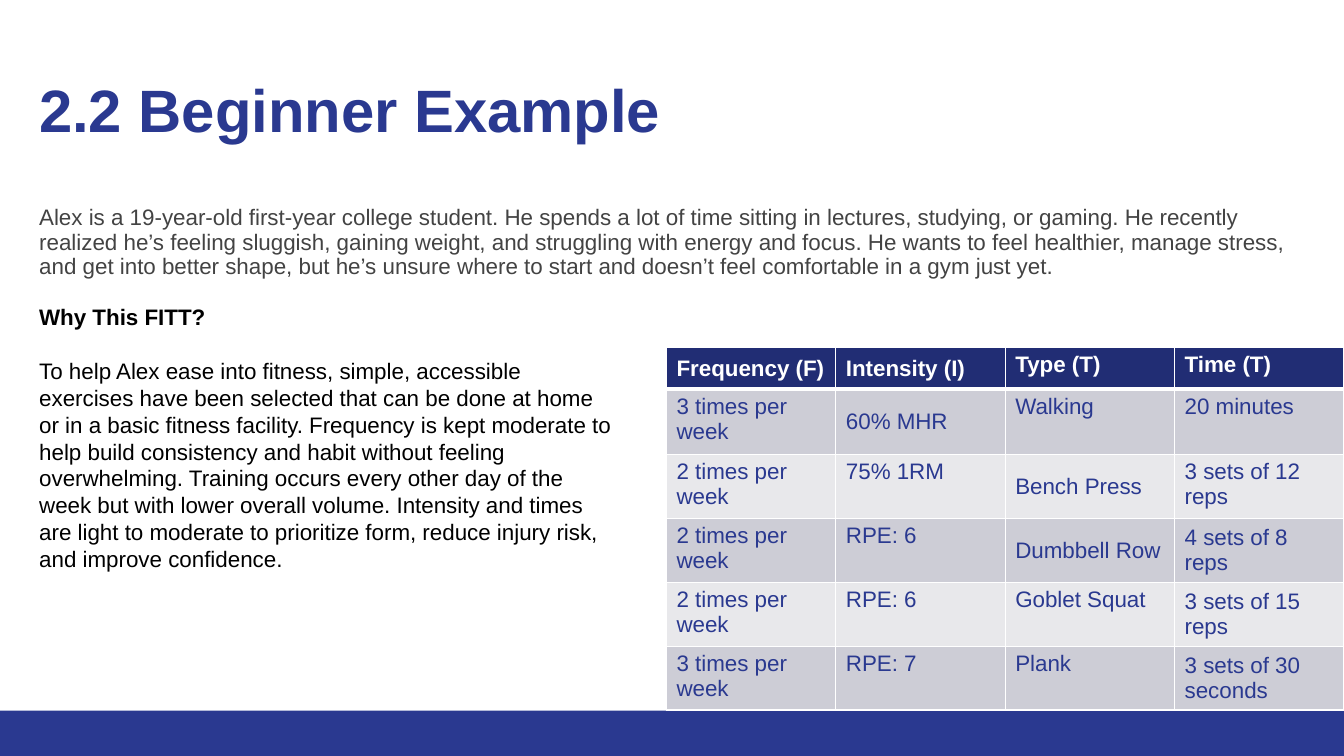
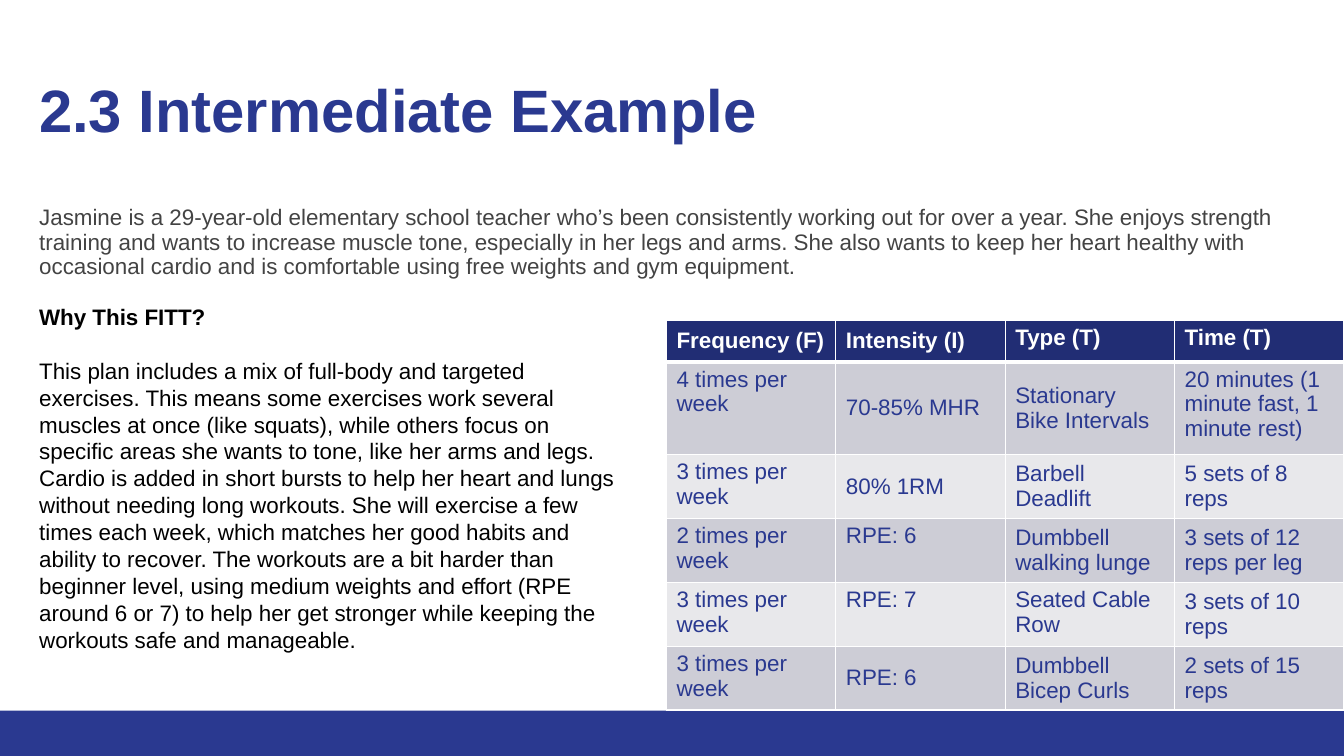
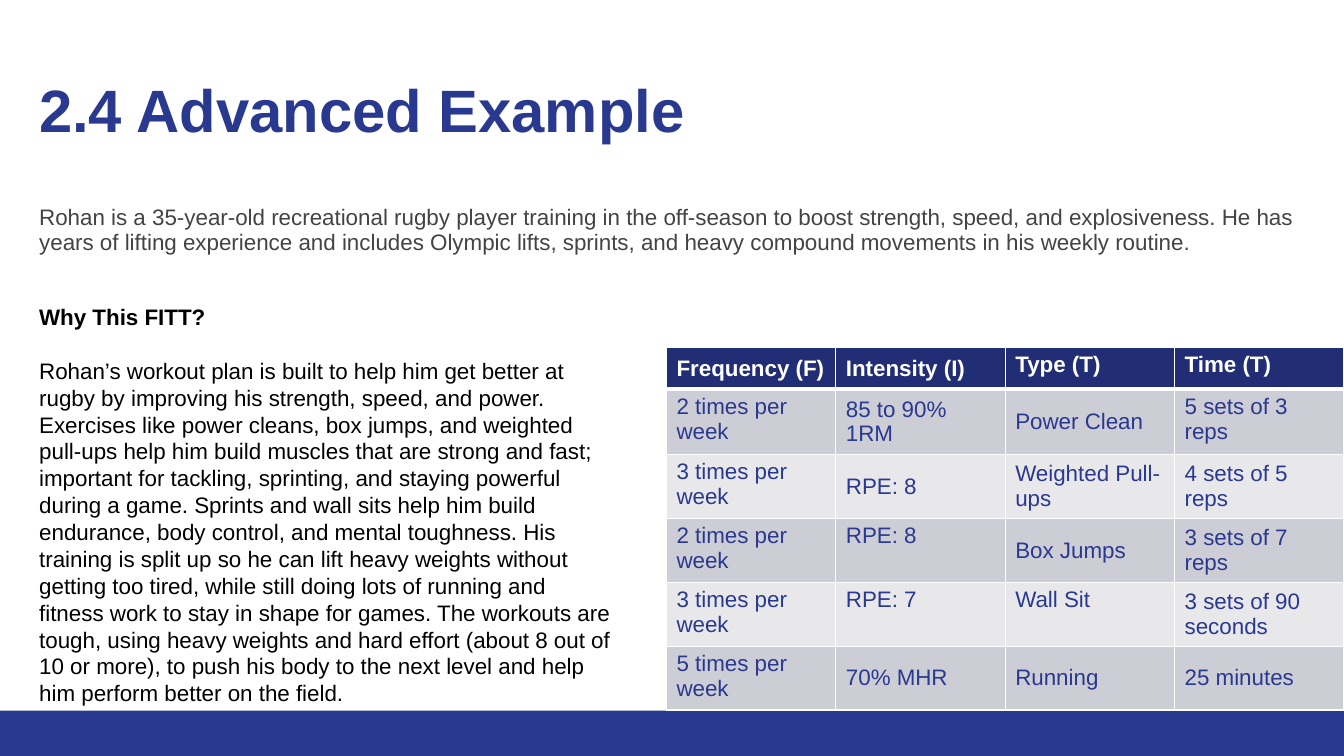
from lxml import etree
from pptx import Presentation
from pptx.dml.color import RGBColor
from pptx.enum import shapes, text
from pptx.oxml import ns
from pptx.util import Inches, Pt

COLORS = {"blue": "2A3990", "navy": "212D74", "white": "FFFFFF", "gray": "434343",
          "black": "000000", "dark_band": "CDCDD6", "light_band": "E8E8EB"}
FONT = "Arial"
BODY_SIZE = 16
SLIDE_W, SLIDE_H = 13.33, 7.5
FOOTER_H = 0.45
MARGIN = 0.29
TITLE_BOX = (MARGIN, 0.4, 12.69, 1.45)
PROFILE_BOX = (MARGIN, 2, 12.69, 0.85)
REASON_BOX = (MARGIN, 2.96, 5.92)
PLAN_LEFT, PLAN_W, PLAN_BOTTOM = 6.61, 6.72, 7.03
HEADER_H = 0.41
ROW_H = 0.63
HEADERS = ("Frequency (F)", "Intensity (I)", "Type (T)", "Time (T)")
HEADER_ANCHORS = "mmtt"

# Each plan row: four cells, then their vertical anchors (t = top, m = middle)
EXAMPLES = [
    {
        "title": "2.2 Beginner Example",
        "profile": "Alex is a 19-year-old first-year college student. He spends a lot of time "
                   "sitting in lectures, studying, or gaming. He recently realized he’s feeling "
                   "sluggish, gaining weight, and struggling with energy and focus. He wants to "
                   "feel healthier, manage stress, and get into better shape, but he’s unsure "
                   "where to start and doesn’t feel comfortable in a gym just yet.",
        "reason": "To help Alex ease into fitness, simple, accessible exercises have been "
                  "selected that can be done at home or in a basic fitness facility. Frequency "
                  "is kept moderate to help build consistency and habit without feeling "
                  "overwhelming. Training occurs every other day of the week but with lower "
                  "overall volume. Intensity and times are light to moderate to prioritize "
                  "form, reduce injury risk, and improve confidence.",
        "reason_h": 2.79,
        "plan_top": 3.45,
        "plan": [
            ("3 times per week", "60% MHR", "Walking", "20 minutes", "tmtt"),
            ("2 times per week", "75% 1RM", "Bench Press", "3 sets of 12 reps", "ttmt"),
            ("2 times per week", "RPE: 6", "Dumbbell Row", "4 sets of 8 reps", "ttmm"),
            ("2 times per week", "RPE: 6", "Goblet Squat", "3 sets of 15 reps", "tttm"),
            ("3 times per week", "RPE: 7", "Plank", "3 sets of 30 seconds", "tttm"),
        ],
    },
    {
        "title": "2.3 Intermediate Example",
        "profile": "Jasmine is a 29-year-old elementary school teacher who’s been consistently "
                   "working out for over a year. She enjoys strength training and wants to "
                   "increase muscle tone, especially in her legs and arms. She also wants to "
                   "keep her heart healthy with occasional cardio and is comfortable using free "
                   "weights and gym equipment.",
        "reason": "This plan includes a mix of full-body and targeted exercises. This means some "
                  "exercises work several muscles at once (like squats), while others focus on "
                  "specific areas she wants to tone, like her arms and legs. Cardio is added in "
                  "short bursts to help her heart and lungs without needing long workouts. She "
                  "will exercise a few times each week, which matches her good habits and "
                  "ability to recover. The workouts are a bit harder than beginner level, using "
                  "medium weights and effort (RPE around 6 or 7) to help her get stronger while "
                  "keeping the workouts safe and manageable.",
        "reason_h": 3.6,
        "plan_top": 3.18,
        "plan": [
            ("4 times per week", "70-85% MHR", "Stationary Bike Intervals",
             "20 minutes (1 minute fast, 1 minute rest)", "tmmt"),
            ("3 times per week", "80% 1RM", "Barbell Deadlift", "5 sets of 8 reps", "tmmm"),
            ("2 times per week", "RPE: 6", "Dumbbell walking lunge",
             "3 sets of 12 reps per leg", "ttmm"),
            ("3 times per week", "RPE: 7", "Seated Cable Row", "3 sets of 10 reps", "tttm"),
            ("3 times per week", "RPE: 6", "Dumbbell Bicep Curls", "2 sets of 15 reps", "tmmm"),
        ],
    },
    {
        "title": "2.4 Advanced Example",
        "profile": "Rohan is a 35-year-old recreational rugby player training in the off-season "
                   "to boost strength, speed, and explosiveness. He has years of lifting "
                   "experience and includes Olympic lifts, sprints, and heavy compound movements "
                   "in his weekly routine.",
        "reason": "Rohan’s workout plan is built to help him get better at rugby by improving "
                  "his strength, speed, and power. Exercises like power cleans, box jumps, and "
                  "weighted pull-ups help him build muscles that are strong and fast; important "
                  "for tackling, sprinting, and staying powerful during a game. Sprints and wall "
                  "sits help him build endurance, body control, and mental toughness. His "
                  "training is split up so he can lift heavy weights without getting too tired, "
                  "while still doing lots of running and fitness work to stay in shape for "
                  "games. The workouts are tough, using heavy weights and hard effort (about 8 "
                  "out of 10 or more), to push his body to the next level and help him perform "
                  "better on the field.",
        "reason_h": 4.14,
        "plan_top": 3.45,
        "plan": [
            ("2 times per week", "85 to 90% 1RM", "Power Clean", "5 sets of 3 reps", "tmmt"),
            ("3 times per week", "RPE: 8", "Weighted Pull-ups", "4 sets of 5 reps", "tmmm"),
            ("2 times per week", "RPE: 8", "Box Jumps", "3 sets of 7 reps", "ttmm"),
            ("3 times per week", "RPE: 7", "Wall Sit", "3 sets of 90 seconds", "tttm"),
            ("5 times per week", "70% MHR", "Running", "25 minutes", "tmmm"),
        ],
    },
]


def rgb(name):
    return RGBColor.from_string(COLORS[name])


def add_run(paragraph, words, color, size=BODY_SIZE, bold=False):
    run = paragraph.add_run()
    run.text = words
    run.font.name, run.font.size, run.font.bold = FONT, Pt(size), bold
    run.font.color.rgb = rgb(color)


def add_text_frame(slide, box, anchor=text.MSO_ANCHOR.TOP):
    frame = slide.shapes.add_textbox(*map(Inches, box)).text_frame
    frame.word_wrap = True
    frame.vertical_anchor = anchor
    return frame


def add_footer_band(slide):
    band = slide.shapes.add_shape(
        shapes.MSO_SHAPE.RECTANGLE, 0, Inches(SLIDE_H - FOOTER_H),
        Inches(SLIDE_W), Inches(FOOTER_H))
    band.shadow.inherit = False
    band.fill.solid()
    band.fill.fore_color.rgb = rgb("blue")
    band.line.fill.background()


def add_title(slide, box, words):
    heading = add_text_frame(slide, box, text.MSO_ANCHOR.MIDDLE).paragraphs[0]
    heading.line_spacing = 0.9
    add_run(heading, words, "blue", 42.7, True)


def add_profile(slide, box, words):
    profile = add_text_frame(slide, box).paragraphs[0]
    profile.line_spacing = 0.9
    add_run(profile, words, "gray")


def add_reason(slide, box, words):
    frame = add_text_frame(slide, box)
    question = frame.paragraphs[0]
    add_run(question, "Why This FITT?", "black", bold=True)
    answer = frame.add_paragraph()
    answer.space_before = Pt(19.2)
    add_run(answer, words, "black")
    for paragraph in frame.paragraphs:
        paragraph.line_spacing = 1.0


def set_borders(cell, top=1, bottom=1):
    properties = cell._tc.get_or_add_tcPr()
    widths = {"a:lnL": 1, "a:lnR": 1, "a:lnT": top, "a:lnB": bottom}
    for position, (tag, width) in enumerate(widths.items()):
        line = etree.Element(ns.qn(tag), w=str(Pt(width)))
        fill = etree.SubElement(line, ns.qn("a:solidFill"))
        etree.SubElement(fill, ns.qn("a:srgbClr"), val=COLORS["white"])
        properties.insert(position, line)


def add_plan(slide, box, plan):
    rows = [(*HEADERS, HEADER_ANCHORS), *plan]
    table = slide.shapes.add_table(len(rows), len(HEADERS), *map(Inches, box)).table
    for column in table.columns:
        column.width = Inches(box[2] / len(HEADERS))

    # The first exercise row takes the height the other rows leave
    first_h = box[3] - HEADER_H - ROW_H * (len(plan) - 1)
    heights = [HEADER_H, first_h] + [ROW_H] * (len(plan) - 1)
    for r, (*entries, anchors) in enumerate(rows):
        table.rows[r].height = Inches(heights[r])
        header = r == 0
        band = "navy" if header else "dark_band" if r % 2 else "light_band"
        for c, (entry, anchor) in enumerate(zip(entries, anchors)):
            cell = table.cell(r, c)
            cell.fill.solid()
            cell.fill.fore_color.rgb = rgb(band)
            cell.vertical_anchor = (text.MSO_ANCHOR.MIDDLE if anchor == "m"
                                    else text.MSO_ANCHOR.TOP)
            set_borders(cell, top=3 if r == 1 else 1, bottom=3 if header else 1)
            add_run(cell.text_frame.paragraphs[0], entry,
                    "white" if header else "blue", bold=header)


def add_example_slide(deck, example):
    slide = deck.slides.add_slide(deck.slide_layouts[6])
    add_footer_band(slide)
    add_title(slide, TITLE_BOX, example["title"])
    add_profile(slide, PROFILE_BOX, example["profile"])
    add_reason(slide, (*REASON_BOX, example["reason_h"]), example["reason"])
    top = example["plan_top"]
    add_plan(slide, (PLAN_LEFT, top, PLAN_W, PLAN_BOTTOM - top), example["plan"])


def main():
    deck = Presentation()
    deck.slide_width, deck.slide_height = Inches(SLIDE_W), Inches(SLIDE_H)
    for example in EXAMPLES:
        add_example_slide(deck, example)
    deck.save("out.pptx")


if __name__ == "__main__":
    main()
